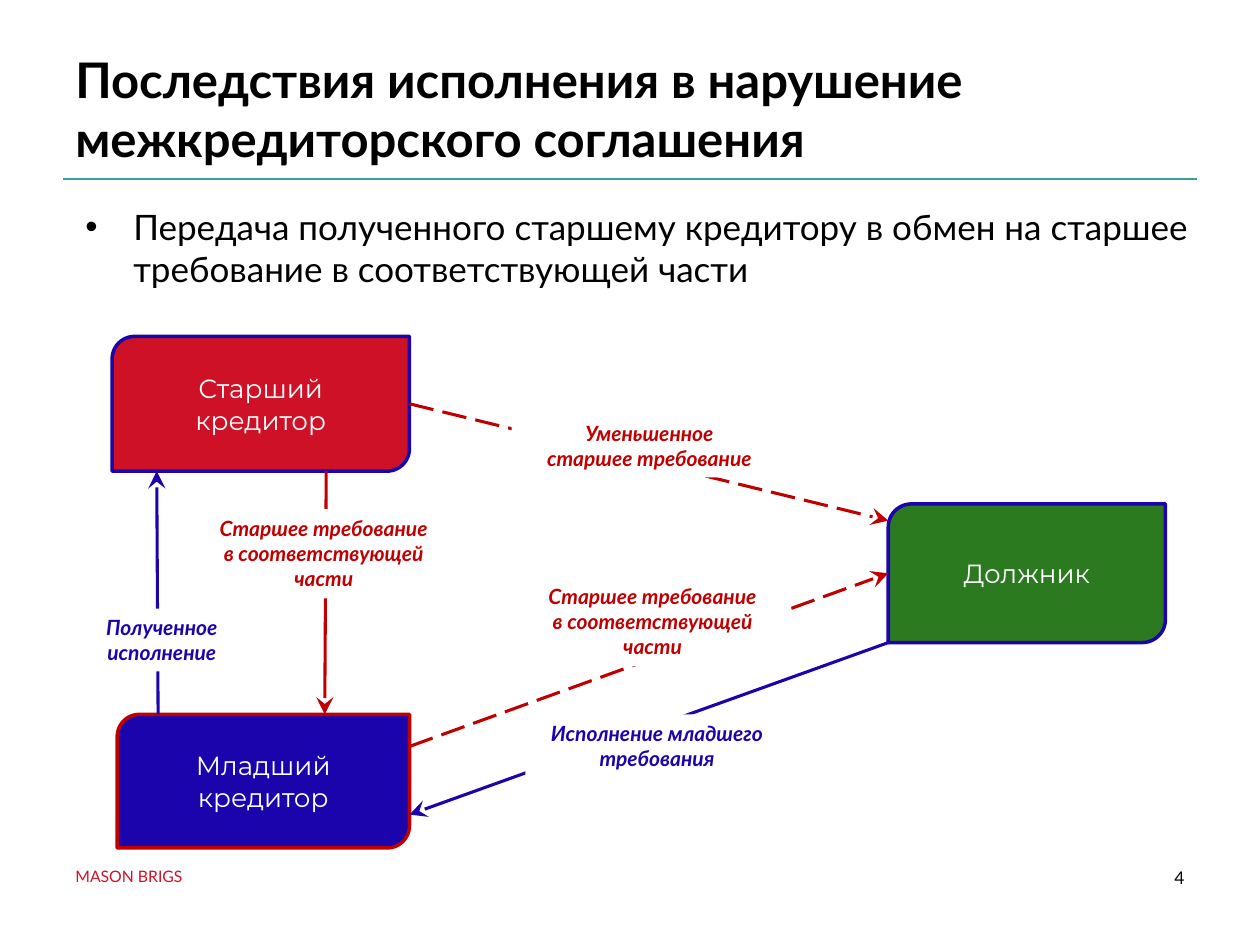
from lxml.etree import SubElement
from pptx import Presentation
from pptx.dml.color import RGBColor
from pptx.enum.dml import MSO_LINE
from pptx.enum.shapes import MSO_CONNECTOR, MSO_SHAPE
from pptx.enum.text import MSO_ANCHOR, PP_ALIGN
from pptx.oxml.ns import qn
from pptx.util import Inches, Pt

BLACK = RGBColor(0x00, 0x00, 0x00)
WHITE = RGBColor(0xFF, 0xFF, 0xFF)
TEAL = RGBColor(0x37, 0xA0, 0x9C)
RED = RGBColor(0xCE, 0x11, 0x26)
DARK_RED = RGBColor(0xC0, 0x00, 0x00)
BLUE = RGBColor(0x1C, 0x04, 0xAC)
GREEN = RGBColor(0x2B, 0x7A, 0x20)

WIDTH, HEIGHT = 10, 7.5
MARGIN = WIDTH * 0.05
CONTENT = WIDTH - 2 * MARGIN
RULE_Y = 1.42
FOOTER_Y = 6.83

TITLE = "Последствия исполнения в нарушение межкредиторского соглашения"
BULLET = ("Передача полученного старшему кредитору в обмен на старшее "
          "требование в соответствующей части")
FOOTER = "MASON BRIGS"
PAGE = "4"

PARTIES = {
    "senior": ("Старший кредитор", (0.89, 2.67, 2.36, 1.07), RED, BLUE),
    "junior": ("Младший кредитор", (0.93, 5.67, 2.32, 1.06), BLUE, DARK_RED),
    "debtor": ("Должник", (7.05, 4, 2.2, 1.1), GREEN, BLUE),
}

FLOWS = [
    (("senior", 1, 0.5), ("debtor", 0, 0.12), DARK_RED, True),
    (("senior", 0.72, 1), ("junior", 0.71, 0), DARK_RED, False),
    (("junior", 0.14, 0), ("senior", 0.15, 1), BLUE, False),
    (("junior", 1, 0.24), ("debtor", 0, 0.5), DARK_RED, True),
    (("debtor", 0, 1), ("junior", 1, 0.75), BLUE, False),
]

SENIOR_PART = ["Старшее требование", "в соответствующей части"]
FLOW_LABELS = [
    (["Уменьшенное", "старшее требование"], (4.06, 3.29, 2.19, 0.5), DARK_RED),
    (["Полученное исполнение"], (0.65, 4.83, 1.27, 0.5), BLUE),
    (SENIOR_PART, (1.47, 4.04, 2.2, 0.71), DARK_RED),
    (SENIOR_PART, (4.08, 4.58, 2.2, 0.71), DARK_RED),
    (["Исполнение младшего требования"], (4.17, 5.67, 2.09, 0.5), BLUE),
]

LABEL_FONT = {"bold": True, "italic": True}


def inches(values):
    return [Inches(value) for value in values]


def write(shape, lines, size, color, align=PP_ALIGN.LEFT,
          anchor=MSO_ANCHOR.TOP, face="Lato", **extras):
    frame = shape.text_frame
    frame.word_wrap = True
    frame.vertical_anchor = anchor
    frame.text = "\n".join(lines)
    for paragraph in frame.paragraphs:
        paragraph.alignment = align
        font = paragraph.runs[0].font
        font.color.rgb = color
        for name, value in {"name": face, "size": Pt(size), **extras}.items():
            setattr(font, name, value)
    return frame


def add_text(slide, box, text, size, color, **options):
    return write(slide.shapes.add_textbox(*inches(box)), [text], size, color, **options)


def add_panel(slide, kind, box, fill, outline=None):
    panel = slide.shapes.add_shape(kind, *inches(box))
    panel.shadow.inherit = False
    panel.fill.solid()
    panel.fill.fore_color.rgb = fill
    if outline is None:
        panel.line.fill.background()
    else:
        panel.line.color.rgb = outline
        panel.line.width = Pt(2)
    return panel


def add_line(slide, start, end, color, width, dashed=False, arrow=False):
    connector = slide.shapes.add_connector(MSO_CONNECTOR.STRAIGHT, *inches(start + end))
    connector.line.color.rgb = color
    connector.line.width = Pt(width)
    if dashed:
        connector.line.dash_style = MSO_LINE.LONG_DASH
    properties = connector.element.spPr
    if arrow:
        SubElement(properties.find(qn("a:ln")), qn("a:tailEnd"), type="stealth", w="lg", len="lg")
    SubElement(properties, qn("a:effectLst"))


def add_bullet(paragraph, indent):
    properties = paragraph._p.get_or_add_pPr()
    properties.set("marL", str(Inches(indent)))
    properties.set("indent", str(-Inches(indent)))
    SubElement(properties, qn("a:buFont"), typeface="Arial")
    SubElement(properties, qn("a:buChar"), char="•")


def edge_point(party, across, down):
    left, top, width, height = PARTIES[party][1]
    return left + width * across, top + height * down


def main():
    deck = Presentation()
    deck.slide_width, deck.slide_height = inches((WIDTH, HEIGHT))
    slide = deck.slides.add_slide(deck.slide_layouts[6])

    add_line(slide, (MARGIN, RULE_Y), (MARGIN + CONTENT, RULE_Y), TEAL, 0.75)
    add_text(slide, (MARGIN, 0.3, CONTENT, RULE_Y - 0.3), TITLE, 28, BLACK,
             anchor=MSO_ANCHOR.MIDDLE, bold=True)
    body = add_text(slide, (0.58, 1.58, CONTENT, 0.8), BULLET, 20, BLACK)
    add_bullet(body.paragraphs[0], 0.38)
    add_text(slide, (MARGIN, FOOTER_Y, 2.75, 0.25), FOOTER, 9, RED)
    add_text(slide, (7.17, FOOTER_Y, 2.33, 0.52), PAGE, 10, BLACK, align=PP_ALIGN.RIGHT)

    for name, box, fill, outline in PARTIES.values():
        party = add_panel(slide, MSO_SHAPE.ROUND_2_DIAG_RECTANGLE, box, fill, outline)
        write(party, [name], 15, WHITE, PP_ALIGN.CENTER, MSO_ANCHOR.MIDDLE, "Montserrat")
    for start, end, color, dashed in FLOWS:
        add_line(slide, edge_point(*start), edge_point(*end), color, 1.75, dashed, arrow=True)
    for lines, box, color in FLOW_LABELS:
        label = add_panel(slide, MSO_SHAPE.RECTANGLE, box, WHITE)
        write(label, lines, 12, color, PP_ALIGN.CENTER, **LABEL_FONT)

    deck.save("out.pptx")


if __name__ == "__main__":
    main()
